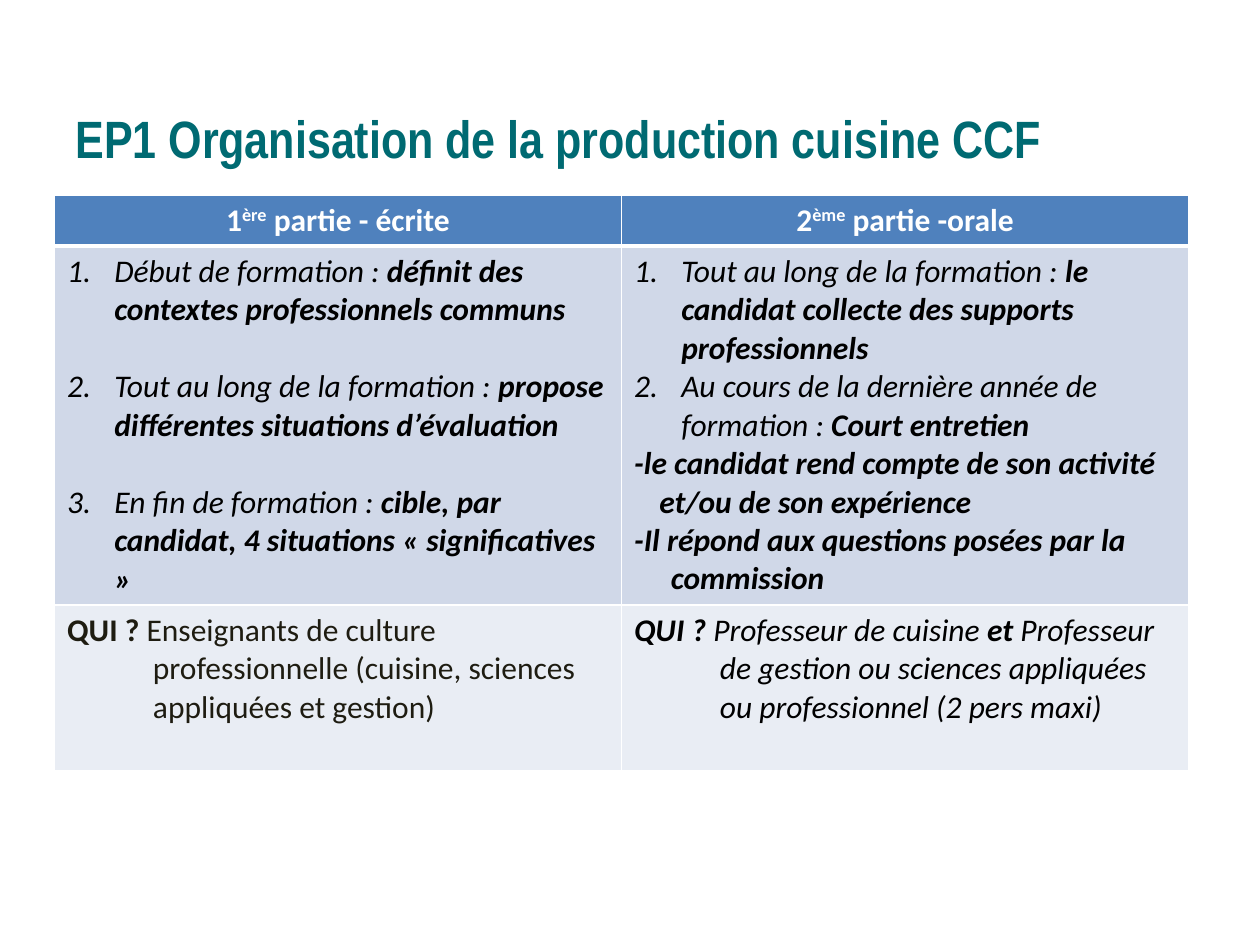
from lxml import etree
from pptx import Presentation
from pptx.dml.color import RGBColor
from pptx.enum.text import MSO_ANCHOR, PP_ALIGN
from pptx.oxml.ns import qn
from pptx.util import Cm, Pt

TOP, MIDDLE = MSO_ANCHOR.TOP, MSO_ANCHOR.MIDDLE
LEFT, CENTER = PP_ALIGN.LEFT, PP_ALIGN.CENTER
WHITE, BLACK, TEAL, DARK = "FFFFFF", "000000", "006A72", "1E1C11"
BLUE, MID, PALE = "4F81BD", "D0D8E8", "E9EDF4"
ROWS = [1.03, 7.24, 3.33]

# Run styles: b = bold, i = italic, s = superscript
HEADS = [
    [("1", "b"), ("ère", "bs"), (" partie - écrite", "b")],
    [("2", "b"), ("ème", "bs"), (" partie -orale", "b")],
]
STEPS = [
    [
        [("Début de formation :", "i"),
         (" définit des contextes professionnels communs", "bi")],
        [("Tout au long de la formation : ", "i"),
         ("propose différentes situations d’évaluation", "bi")],
        [("En fin de formation : ", "i"),
         ("cible, par candidat, 4 situations « significatives »", "bi")],
    ],
    [
        [("Tout au long de la formation : ", "i"),
         ("le candidat collecte des supports professionnels", "bi")],
        [("Au cours de la dernière année de formation : ", "i"),
         ("Court entretien", "bi")],
    ],
]
TALK = [
    ("-le candidat rend compte de son activité et/ou de son expérience", 0.51),
    ("-Il répond aux questions posées par la commission", 0.74),
]
WHO = [
    [("QUI ? ", "b"),
     ("Enseignants de culture professionnelle "
      "(cuisine, sciences appliquées et gestion)", "")],
    [("QUI ? ", "bi"), ("Professeur de cuisine ", "i"), ("et ", "bi"),
     ("Professeur de gestion ou sciences appliquées "
      "ou professionnel (2 pers maxi)", "i")],
]


def color(code):
    return RGBColor.from_string(code)


def style(run, font, size, code, marks):
    run.font.name, run.font.size = font, Pt(size)
    run.font.color.rgb = color(code)
    run.font.bold = "b" in marks
    run.font.italic = "i" in marks
    if "s" in marks:
        run._r.get_or_add_rPr().set("baseline", "30000")


def write(cell, parts, code=BLACK, hang=0, number=False, gap=0, align=LEFT):
    """Add a paragraph with a hanging indent in cm and a gap before in points."""
    frame = cell.text_frame
    first = not frame.text
    para = frame.paragraphs[0] if first else frame.add_paragraph()
    para.alignment = align
    props = para._p.get_or_add_pPr()
    props.set("marL", str(Cm(hang)))
    props.set("indent", str(-Cm(hang)))
    if number:
        etree.SubElement(props, qn("a:buFont"), typeface="+mj-lt")
        etree.SubElement(props, qn("a:buAutoNum"), type="arabicPeriod")
    if gap and not first:
        para.space_before = Pt(gap)
    for text, marks in parts:
        run = para.add_run()
        run.text = text
        style(run, "Calibri", 18, code, marks)


def dress(cell, fill, top=1, bottom=1):
    """Set the white borders, with widths in points, and the fill."""
    props = cell._tc.get_or_add_tcPr()
    for side, width in zip("LRTB", (1, 1, top, bottom)):
        line = etree.SubElement(props, qn("a:ln" + side), w=str(Pt(width)))
        solid = etree.SubElement(line, qn("a:solidFill"))
        etree.SubElement(solid, qn("a:srgbClr"), val=WHITE)
    cell.fill.solid()
    cell.fill.fore_color.rgb = color(fill)


def add_title(slide, x, y, w, h):
    frame = slide.shapes.add_textbox(Cm(x), Cm(y), Cm(w), Cm(h)).text_frame
    frame.word_wrap = True
    frame.vertical_anchor = TOP
    frame.margin_top, frame.margin_bottom = Cm(0.35), 0
    frame.text = "EP1 Organisation de la production cuisine CCF"
    para = frame.paragraphs[0]
    para.line_spacing = Pt(33)
    style(para.runs[0], "Arial Narrow", 30, TEAL, "b")


def add_grid(slide, x, y, w):
    shape = slide.shapes.add_table(
        len(ROWS), 2, Cm(x), Cm(y), Cm(w), Cm(sum(ROWS)))
    table = shape.table
    table.horz_banding = False
    for row, high in zip(table.rows, ROWS):
        row.height = Cm(high)
    for col in range(2):
        table.columns[col].width = Cm(w / 2)
        head, body, foot = (table.cell(row, col) for row in range(3))
        dress(head, BLUE, bottom=3)
        dress(body, MID, top=3)
        dress(foot, PALE)
        head.vertical_anchor = MIDDLE
        write(head, HEADS[col], WHITE, align=CENTER)
        for step in STEPS[col]:
            write(body, step, hang=0.95, number=True, gap=0 if col else 22)
        write(foot, WHO[col], BLACK if col else DARK, hang=1.73)
    for text, hang in TALK:
        write(table.cell(1, 1), [(text, "bi")], hang=hang)


def main():
    deck = Presentation()
    deck.slide_width, deck.slide_height = Cm(25.4), Cm(19.05)
    slide = deck.slides.add_slide(deck.slide_layouts[6])
    add_title(slide, 1.27, 1.9, 22.86, 3.02)
    add_grid(slide, 1.1, 3.93, 22.86)
    deck.save("out.pptx")


if __name__ == "__main__":
    main()
